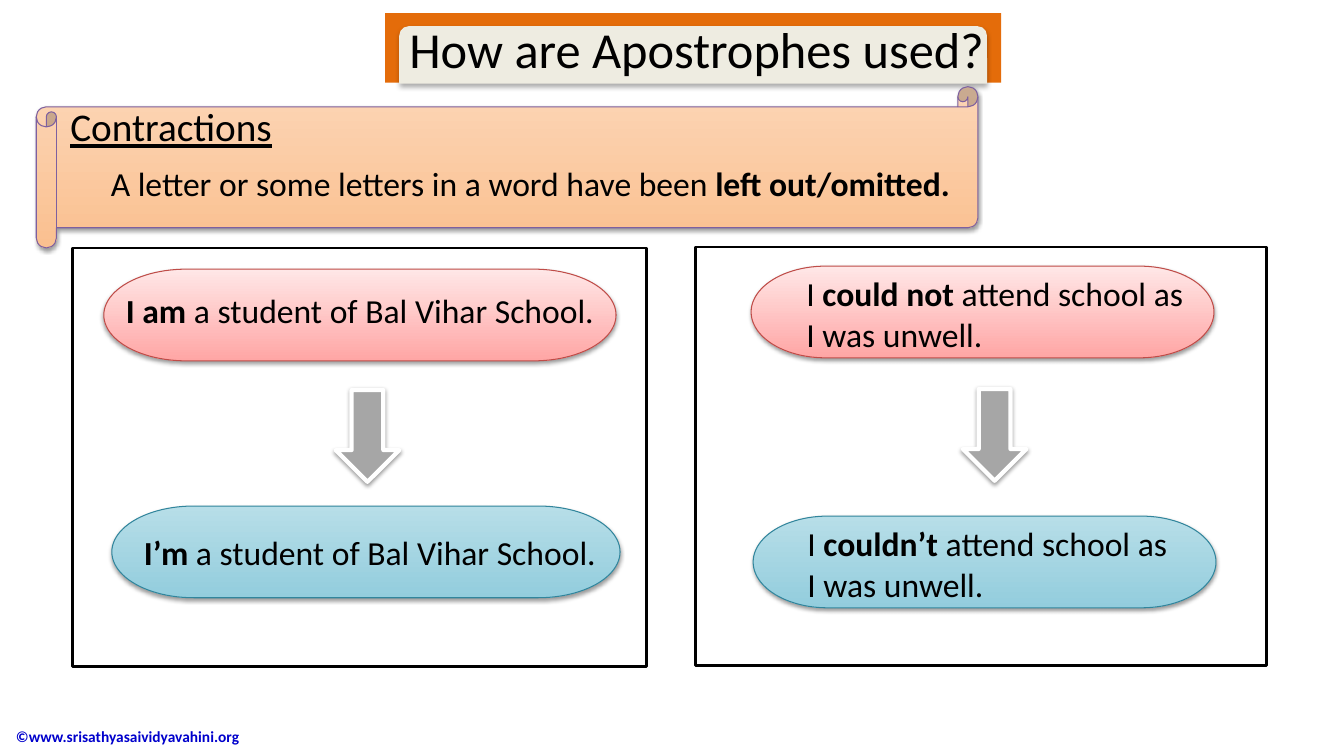
from lxml.etree import SubElement
from pptx import Presentation
from pptx.dml.color import RGBColor
from pptx.enum.shapes import MSO_SHAPE as SHAPE
from pptx.enum.text import MSO_ANCHOR, PP_ALIGN
from pptx.oxml.ns import qn
from pptx.util import Pt

PX = 9144  # 100 px to the inch
PINK = ["FFE7E7", "FFA6A5"]
BLUE = ["B7DEE8", "93CDDD"]
PEACH = ["FCD5B5", "FAC090"]

prs = Presentation()
prs.slide_width, prs.slide_height = 1333 * PX, 750 * PX
slide = prs.slides.add_slide(prs.slide_layouts[5])


def add_block(kind, box, fills, line=None, width=0.75, shadow=None):
    """Draw a shape; two fills run from top to bottom, shadow is (opacity %, blur pt, distance pt)."""
    block = slide.shapes.add_shape(kind, *[n * PX for n in box])
    block.shadow.inherit = False
    if len(fills) == 1:
        block.fill.solid()
        block.fill.fore_color.rgb = RGBColor.from_string(fills[0])
    else:
        block.fill.gradient()
        block.fill.gradient_angle = 270
        for stop, color in zip(block.fill.gradient_stops, fills):
            stop.color.rgb = RGBColor.from_string(color)
    if line:
        block.line.color.rgb = RGBColor.from_string(line)
        block.line.width = Pt(width)
    else:
        block.line.fill.background()
    if shadow:
        opacity, blur, distance = shadow
        effects = block.element.spPr.find(qn("a:effectLst"))
        outer = SubElement(effects, qn("a:outerShdw"), blurRad=str(Pt(blur)), dist=str(Pt(distance)),
                           dir="5400000", rotWithShape="0")
        black = SubElement(outer, qn("a:srgbClr"), val="000000")
        SubElement(black, qn("a:alpha"), val=str(opacity * 1000))


def write(holder, box, lines, size, color="000000"):
    """Place and fill a text holder; words between asterisks are bold."""
    holder.left, holder.top, holder.width, holder.height = [n * PX for n in box]
    frame = holder.text_frame
    frame.word_wrap = True
    frame.vertical_anchor = MSO_ANCHOR.TOP
    frame.text = "\n".join(lines)
    for paragraph, line in zip(frame.paragraphs, lines):
        paragraph.text = ""
        paragraph.alignment = PP_ALIGN.LEFT
        for i, words in enumerate(line.split("*")):
            if words:
                run = paragraph.add_run()
                run.text = words
                run.font.name = "Calibri"
                run.font.size = Pt(size)
                run.font.bold = i % 2 == 1
                run.font.color.rgb = RGBColor.from_string(color)
    return frame


SOFT = (38, 3.1, 1.6)

# Heading
add_block(SHAPE.RECTANGLE, (382, 13, 611, 69), ["E46C0A"])
add_block(SHAPE.ROUND_2_SAME_RECTANGLE, (396, 26, 583, 57), ["EEECE1"], shadow=(32, 3.5, 2.2))
title = slide.shapes.title
title.element.getparent().append(title.element)  # in front of its banner
write(title, (396, 13, 611, 71), ["How are Apostrophes used?"], 36)

# Rule on a scroll
add_block(SHAPE.HORIZONTAL_SCROLL, (36, 86, 934, 160), PEACH, "7D60A0", shadow=SOFT)
term = write(slide.shapes.add_textbox(0, 0, 0, 0), (60, 97, 228, 57), ["Contractions"], 28)
term.paragraphs[0].runs[0].font.underline = True
write(slide.shapes.add_textbox(0, 0, 0, 0), (100, 157, 908, 50),
      ["A letter or some letters in a word have been *left out/omitted.*"], 24)

# Examples: panel, arrow, then full form and contraction as (bubble, text box, colours, outline, lines)
examples = [
    ((72, 246, 569, 415), (333, 387, 63, 91), [
        ((103, 267, 508, 91), (115, 283, 508, 50), PINK, "BF4C48",
         ["*I am *a student of Bal Vihar School."]),
        ((111, 502, 504, 91), (133, 523, 487, 50), BLUE, "31859C",
         ["*I’m* a student of Bal Vihar School."]),
    ]),
    ((690, 245, 566, 415), (955, 386, 63, 91), [
        ((745, 264, 459, 91), (790, 266, 400, 91), PINK, "BF4C48",
         ["I *could not *attend school as", "I was unwell."]),
        ((747, 512, 459, 91), (791, 514, 444, 91), BLUE, "31859C",
         ["I *couldn’t* attend school as", "I was unwell."]),
    ]),
]
for panel, arrow, sentences in examples:
    add_block(SHAPE.RECTANGLE, panel, ["FFFFFF"], "000000", 2)
    add_block(SHAPE.DOWN_ARROW, arrow, ["A6A6A6"], "FFFFFF", 3, SOFT)
    for bubble, text_box, fills, outline, lines in sentences:
        add_block(SHAPE.FLOWCHART_TERMINATOR, bubble, fills, outline, shadow=SOFT)
        write(slide.shapes.add_textbox(0, 0, 0, 0), text_box, lines, 24)

# Footer
footer = write(slide.shapes.add_textbox(0, 0, 0, 0), (6, 710, 353, 41),
               ["*©www.srisathyasaividyavahini.org*"], 11, "0000CC")
footer.vertical_anchor = MSO_ANCHOR.MIDDLE

prs.save("out.pptx")
